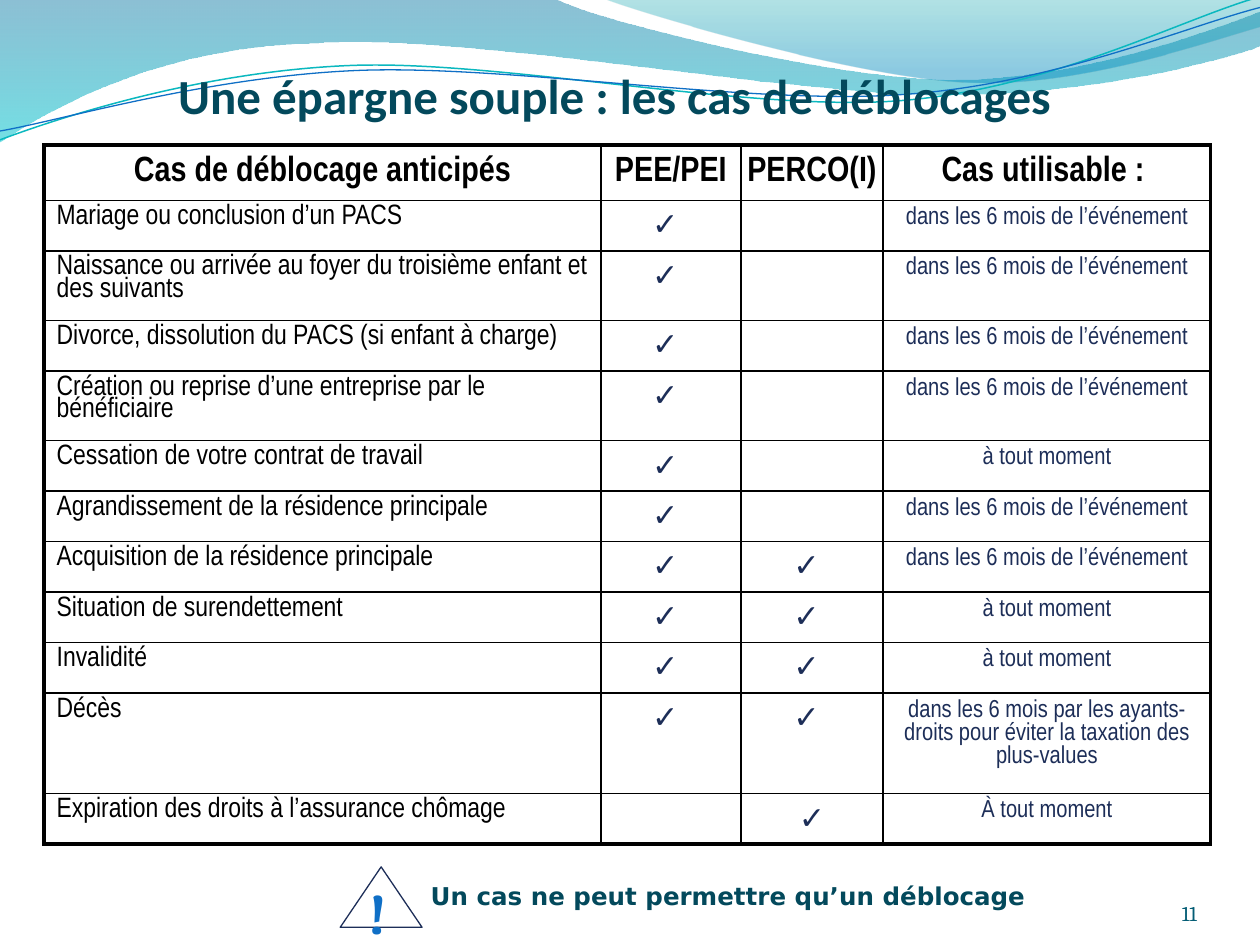
from dataclasses import dataclass
from math import cos, radians, sin

from pptx import Presentation
from pptx.dml.color import RGBColor
from pptx.enum.shapes import MSO_SHAPE
from pptx.enum.text import MSO_ANCHOR, PP_ALIGN
from pptx.oxml.ns import qn
from pptx.util import Inches, Pt
from lxml.etree import SubElement


@dataclass(frozen=True)
class Theme:
    black: str = "000000"
    white: str = "FFFFFF"
    navy: str = "1D2E58"
    heading: str = "03495C"
    number: str = "045D75"
    blue: str = "0F6FC6"
    cyan: str = "0AB8BF"
    deep_blue: str = "0074A1"
    aqua: str = "00C6CF"
    teal: str = "00A1A9"
    sky: str = "008BBF"
    narrow: str = "Arial Narrow"
    symbol: str = "DejaVu Sans"
    serif: str = "Cambria"
    title_font: str = "Calibri"
    title_size: int = 28
    header_size: int = 20
    case_size: int = 16
    check_size: int = 18
    note_size: int = 14
    number_size: int = 12
    alert_size: int = 32
    inner_border: float = 1
    outer_border: float = 2.25


theme = Theme()


def add_wave(shapes, start, segments, closed):
    points = [segment[i:i + 2] for segment in segments for i in range(0, len(segment), 2)]
    builder = shapes.build_freeform(Inches(start[0]), Inches(start[1]), scale=1.0)
    builder.add_line_segments([(Inches(x), Inches(y)) for x, y in points], close=closed)
    wave = builder.convert_to_shape()
    wave.shadow.inherit = False
    lines = iter(list(wave.element.iter(qn("a:lnTo"))))
    for segment in segments:
        line = next(lines)
        if len(segment) == 6:
            line.tag = qn("a:cubicBezTo")
            for extra in (next(lines), next(lines)):
                line.append(extra[0])
                extra.getparent().remove(extra)
    return wave


def write(frame, text, font, size, color, bold=False, align=PP_ALIGN.LEFT, spacing=None):
    para = frame.paragraphs[0]
    para.alignment = align
    para.space_before = Pt(0)
    if spacing:
        para.line_spacing = spacing
    span = para.add_run()
    span.text = text
    span.font.name = font
    span.font.size = Pt(size)
    span.font.bold = bold
    span.font.color.rgb = RGBColor.from_string(color)


deck = Presentation()
deck.slide_width = Inches(10)
deck.slide_height = Inches(7.5)
page = deck.slides.add_slide(deck.slide_layouts[5])
shapes = page.shapes

bands = [
    ((0, 0), [
        (4.4, -0.01), (4.76, 0.17, 6.64, 0.63, 7.58, 0.63), (8.53, 0.63, 9.58, 0.26, 10, 0.09),
        (10.01, 0.36), (9.83, 0.44, 8.7, 0.76, 7.46, 0.75), (6.22, 0.75, 3.82, 0.28, 2.57, 0.34),
        (1.29, 0.36, 0.46, 0.83, -0.01, 1.13), (0, 0),
    ], [(0, theme.deep_blue, 45), (1, theme.aqua, 55)]),
    ((4.79, -0.01), [
        (5.09, 0.11, 6.82, 0.62, 7.69, 0.65), (8.56, 0.69, 9.61, 0.32, 10, 0.21), (10, 0),
        (4.79, -0.01),
    ], [(0, theme.teal, 30), (0.8, theme.sky, 45)]),
]
for start, segments, stops in bands:
    band = add_wave(shapes, start, segments, True)
    band.line.fill.background()
    band.fill.gradient()
    band.fill.gradient_angle = 270
    for stop, (position, color, opacity) in zip(band.fill.gradient_stops, stops):
        stop.position = position
        stop.color.rgb = RGBColor.from_string(color)
    for node, (position, color, opacity) in zip(band.element.spPr.iter(qn("a:srgbClr")), stops):
        SubElement(node, qn("a:alpha"), val=str(opacity * 1000))

tilt = 2.7
turn_cos, turn_sin = cos(radians(tilt)), sin(radians(tilt))
curves = [
    ([0, 1.11, 0.48, 0.93, 1.58, 0.57, 2.77, 0.52, 3.95, 0.47, 5.93, 0.89, 7.13, 0.8,
      8.33, 0.71, 9.38, 0.15, 9.98, -0.02], (4.99, 0.58), theme.cyan, 0.85),
    ([0, 1.04, 0.47, 0.96, 1.64, 0.61, 2.83, 0.56, 4.03, 0.51, 5.97, 0.84, 7.17, 0.75,
      8.36, 0.67, 9.41, 0.21, 10, 0.06], (5, 0.59), theme.blue, 0.75),
]
for numbers, (center_x, center_y), color, width in curves:
    level = []
    for x, y in zip(numbers[::2], numbers[1::2]):
        x, y = x - center_x, y - center_y
        level += [center_x + x * turn_cos - y * turn_sin, center_y + x * turn_sin + y * turn_cos]
    curve = add_wave(shapes, level[:2], [level[i:i + 6] for i in range(2, len(level), 6)], False)
    curve.rotation = 360 - tilt
    curve.fill.background()
    curve.line.color.rgb = RGBColor.from_string(color)
    curve.line.width = Pt(width)

title = shapes.title
title.left, title.top, title.width, title.height = [Inches(n) for n in (0.67, 0.28, 8.5, 0.71)]
frame = title.text_frame
frame.vertical_anchor = MSO_ANCHOR.BOTTOM
frame.margin_left = frame.margin_right = frame.margin_bottom = 0
write(frame, "Une épargne souple : les cas de déblocages ", theme.title_font, theme.title_size,
      theme.heading, True, PP_ALIGN.CENTER)
shapes.element.append(title.element)

number_box = shapes.add_textbox(Inches(8.67), Inches(6.95), Inches(0.83), Inches(0.4))
frame = number_box.text_frame
frame.word_wrap = True
frame.vertical_anchor = MSO_ANCHOR.BOTTOM
frame.margin_left = frame.margin_right = frame.margin_top = frame.margin_bottom = 0
write(frame, "11", theme.serif, theme.number_size, theme.number, align=PP_ALIGN.RIGHT)

check = "✓ "
event = "dans les 6 mois de l’événement"
anytime = "à tout moment"
rows = [
    (0.44, "Cas de déblocage anticipés", "PEE/PEI", "PERCO(I)", "Cas utilisable : "),
    (0.4, "Mariage ou conclusion d’un PACS", check, "", event),
    (0.55, "Naissance ou arrivée au foyer du troisième enfant et des suivants", check, "", event),
    (0.4, "Divorce, dissolution du PACS (si enfant à charge)", check, "", event),
    (0.55, "Création ou reprise d’une entreprise par le bénéficiaire", check, "", event),
    (0.4, "Cessation de votre contrat de travail", check, "", anytime),
    (0.4, "Agrandissement de la résidence principale", check, "", event),
    (0.4, "Acquisition de la résidence principale", check, check, event),
    (0.4, "Situation de surendettement", check, check, anytime),
    (0.4, "Invalidité", check, check, anytime),
    (0.79, "Décès", check, check,
     "dans les 6 mois par les ayants-droits pour éviter la taxation des plus-values"),
    (0.4, "Expiration des droits à l’assurance chômage", "", "✓", "À tout moment"),
]
widths = [4.42, 1.11, 1.13, 2.6]
row_scale = 0.99
table = shapes.add_table(len(rows), len(widths), Inches(0.35), Inches(1.15), Inches(sum(widths)),
                         Inches(row_scale * sum(row[0] for row in rows))).table
table.first_row = table.horz_banding = False
for column, width in zip(table.columns, widths):
    column.width = Inches(width)

last_row, last_column = len(rows) - 1, len(widths) - 1
for r, (height, *texts) in enumerate(rows):
    table.rows[r].height = Inches(height * row_scale if r else height)
    for c, text in enumerate(texts):
        cell = table.cell(r, c)
        properties = cell._tc.get_or_add_tcPr()
        edges = {"L": c == 0, "R": c == last_column, "T": r == 0, "B": r == last_row}
        for side, outer in edges.items():
            width = Pt(theme.outer_border if outer else theme.inner_border)
            border = SubElement(properties, qn("a:ln" + side), w=str(width))
            fill = SubElement(border, qn("a:solidFill"))
            SubElement(fill, qn("a:srgbClr"), val=theme.black)
        if r == 0:
            cell.fill.solid()
            cell.fill.fore_color.rgb = RGBColor.from_string(theme.white)
            cell.vertical_anchor = MSO_ANCHOR.MIDDLE
        else:
            cell.fill.background()
        if c == 2 and text:
            cell.margin_left = cell.margin_right = Inches(0.04)
        if not text:
            continue
        if r == 0:
            style = (theme.narrow, theme.header_size, theme.black, True, PP_ALIGN.CENTER)
        elif c == 0:
            style = (theme.narrow, theme.case_size, theme.black, False, PP_ALIGN.LEFT, 0.85)
        elif c == last_column:
            style = (theme.narrow, theme.note_size, theme.navy, False, PP_ALIGN.CENTER)
        else:
            style = (theme.symbol, theme.check_size, theme.navy, True, PP_ALIGN.CENTER)
        write(cell.text_frame, text, *style)

note = shapes.add_textbox(Inches(3.32), Inches(6.99), Inches(5.07), Inches(0.47))
note.text_frame.word_wrap = True
write(note.text_frame, "Un cas ne peut permettre qu’un déblocage", theme.symbol, theme.note_size,
      theme.heading, True, spacing=0.8)

warning = shapes.add_shape(MSO_SHAPE.ISOSCELES_TRIANGLE, Inches(2.7), Inches(6.88), Inches(0.65), Inches(0.48))
warning.shadow.inherit = False
warning.fill.background()
warning.line.color.rgb = RGBColor.from_string(theme.navy)
warning.line.width = Pt(0.75)
frame = warning.text_frame
frame.vertical_anchor = MSO_ANCHOR.MIDDLE
frame.margin_left = frame.margin_right = Inches(0.06)
write(frame, "!", theme.serif, theme.alert_size, theme.blue, True)

deck.save("out.pptx")
